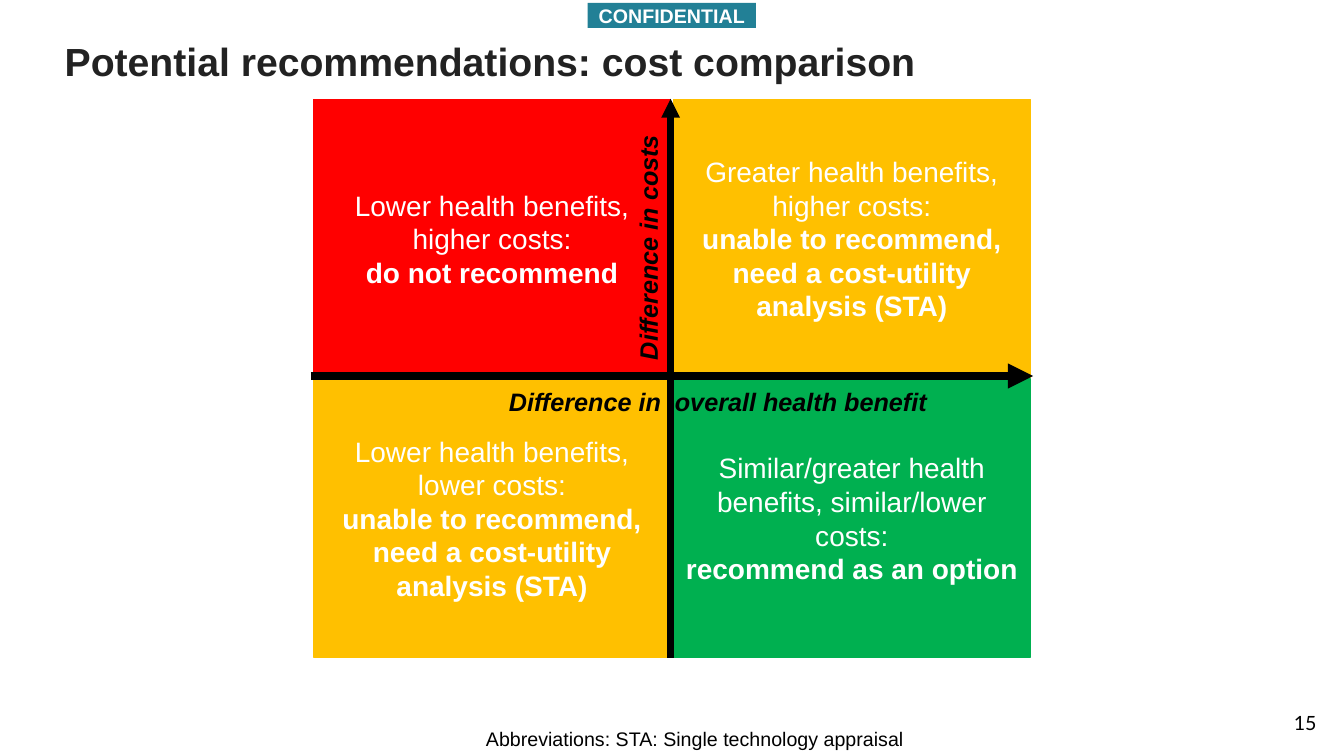
from dataclasses import dataclass, field
from typing import Any

from lxml.etree import SubElement
from pptx import Presentation
from pptx.dml.color import RGBColor
from pptx.enum.shapes import MSO_CONNECTOR, MSO_SHAPE
from pptx.enum.text import MSO_ANCHOR, MSO_AUTO_SIZE, PP_ALIGN
from pptx.oxml.ns import qn
from pptx.util import Pt

COLOURS = {
    "title": "222222",
    "black": "000000",
    "white": "FFFFFF",
    "reject": "FF0000",
    "unable": "FFC000",
    "recommend": "00B050",
    "banner": "228096",
}
GRID_LEFT, GRID_TOP = 224, 71
STEP_X, STEP_Y = 257, 199.7
QUADRANT_WIDTH, QUADRANT_HEIGHT = 255, 198.7
UNABLE = "unable to recommend, need a cost-utility analysis (STA)"


@dataclass
class Quadrant:
    column: int
    row: int
    colour: str
    finding: str
    decision: str


@dataclass
class Label:
    text: str
    left: float
    top: float
    width: float
    height: float
    size: float
    align: PP_ALIGN = PP_ALIGN.LEFT
    rotation: float = 0
    style: dict[str, Any] = field(default_factory=dict)


@dataclass
class Axis:
    start: tuple[float, float]
    end: tuple[float, float]
    weight: float


QUADRANTS = [
    Quadrant(0, 0, "reject", "Lower health benefits, higher costs:", "do not recommend"),
    Quadrant(1, 0, "unable", "Greater health benefits, higher costs:", UNABLE),
    Quadrant(0, 1, "unable", "Lower health benefits, lower costs:", UNABLE),
    Quadrant(1, 1, "recommend", "Similar/greater health benefits, similar/lower costs:",
             "recommend as an option"),
]
AXES = [
    Axis((222, 268.6), (738, 268.6), 6),
    Axis((479, 470), (479, 70.6), 4.5),
]
AXIS_STYLE = {"bold": True, "italic": True}
LABELS = [
    Label("Difference in costs", 368.6, 155.5, 188.6, 29, 18, rotation=270, style=AXIS_STYLE),
    Label("Difference in  overall health benefit", 356.4, 272.2, 334.8, 29, 18, style=AXIS_STYLE),
    Label("Abbreviations: STA: Single technology appraisal", 81.4, 515.5, 830, 24.5, 14,
          PP_ALIGN.CENTER),
    Label("15", 910.8, 504, 36.7, 28.8, 14, PP_ALIGN.RIGHT, style={"name": "Lato"}),
]


def colour(name: str) -> RGBColor:
    return RGBColor.from_string(COLOURS[name])


def write(para: Any, text: str, size: float, ink: str, **style: Any) -> None:
    span = para.add_run()
    span.text = text
    formats = {"name": "Arial", "size": Pt(size), "bold": False, **style}
    for key, value in formats.items():
        setattr(span.font, key, value)
    span.font.color.rgb = colour(ink)


def add_rectangle(page: Any, left: float, top: float, width: float, height: float,
                  fill: str, outlined: bool) -> Any:
    box = page.shapes.add_shape(MSO_SHAPE.RECTANGLE, Pt(left), Pt(top), Pt(width), Pt(height))
    box.shadow.inherit = False
    box.fill.solid()
    box.fill.fore_color.rgb = colour(fill)
    if outlined:
        box.line.color.rgb = colour(fill)
        box.line.width = Pt(1)
    else:
        box.line.fill.background()
    box.text_frame.word_wrap = True
    box.text_frame.vertical_anchor = MSO_ANCHOR.MIDDLE
    box.text_frame.paragraphs[0].alignment = PP_ALIGN.CENTER
    return box


def add_quadrant(page: Any, quadrant: Quadrant) -> None:
    box = add_rectangle(page, GRID_LEFT + quadrant.column * STEP_X,
                        GRID_TOP + quadrant.row * STEP_Y,
                        QUADRANT_WIDTH, QUADRANT_HEIGHT, quadrant.colour, True)
    write(box.text_frame.paragraphs[0], quadrant.finding, 20, "white")
    para = box.text_frame.add_paragraph()
    para.alignment = PP_ALIGN.CENTER
    write(para, quadrant.decision, 20, "white", bold=True)


def add_axis(page: Any, axis: Axis) -> None:
    arrow = page.shapes.add_connector(MSO_CONNECTOR.STRAIGHT, *map(Pt, axis.start + axis.end))
    arrow.line.color.rgb = colour("black")
    arrow.line.width = Pt(axis.weight)
    SubElement(arrow.line._get_or_add_ln(), qn("a:tailEnd"), type="triangle")
    SubElement(arrow._element.spPr, qn("a:effectLst"))


def add_label(page: Any, label: Label) -> None:
    box = page.shapes.add_textbox(Pt(label.left), Pt(label.top), Pt(label.width), Pt(label.height))
    box.rotation = label.rotation
    box.text_frame.word_wrap = True
    para = box.text_frame.paragraphs[0]
    para.alignment = label.align
    write(para, label.text, label.size, "black", **label.style)


def add_title(page: Any, text: str) -> None:
    title = page.shapes.title
    place = {"left": 39, "top": 24.5, "width": 872.6, "height": 42.5}
    for key, value in place.items():
        setattr(title, key, Pt(value))
    frame_formats = {"word_wrap": True, "auto_size": MSO_AUTO_SIZE.NONE,
                     "vertical_anchor": MSO_ANCHOR.MIDDLE}
    for key, value in frame_formats.items():
        setattr(title.text_frame, key, value)
    para = title.text_frame.paragraphs[0]
    para.alignment = PP_ALIGN.LEFT
    para.line_spacing = 0.9
    write(para, text, 28, "title", bold=True)


def main() -> None:
    deck = Presentation()
    deck.slide_width, deck.slide_height = Pt(960), Pt(540)
    page = deck.slides.add_slide(deck.slide_layouts[5])
    add_title(page, "Potential recommendations: cost comparison")
    for quadrant in QUADRANTS:
        add_quadrant(page, quadrant)
    for axis in AXES:
        add_axis(page, axis)
    for label in LABELS:
        add_label(page, label)
    banner = add_rectangle(page, 419.8, 2, 120.2, 18, "banner", False)
    write(banner.text_frame.paragraphs[0], "CONFIDENTIAL", 14, "white", bold=True)
    deck.save("out.pptx")


if __name__ == "__main__":
    main()
